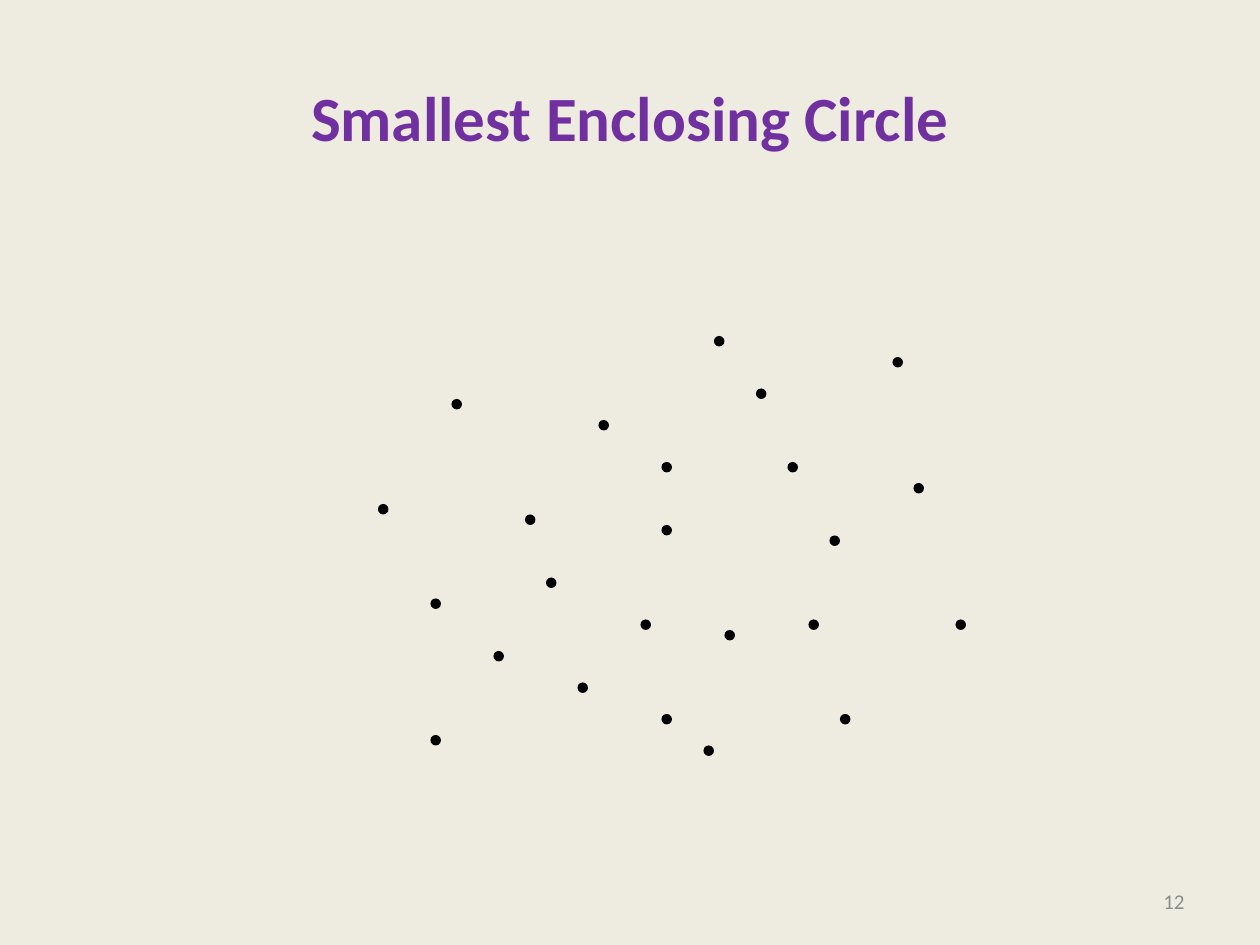
"""Build the smallest enclosing circle slide with its scattered points."""
from typing import Any, NamedTuple

from pptx import Presentation
from pptx.dml.color import RGBColor
from pptx.enum.shapes import MSO_SHAPE as Shape
from pptx.enum.text import MSO_ANCHOR as Anchor, PP_ALIGN as Align
from pptx.util import Pt

CREAM = RGBColor(0xEE, 0xEC, 0xE1)
PURPLE = RGBColor(0x70, 0x30, 0xA0)
GRAY = RGBColor(0x8C, 0x8C, 0x8C)
BLACK = RGBColor(0, 0, 0)
STEP = 6


class Dot(NamedTuple):
    col: int
    row: int


DOTS = [
    Dot(43, 38), Dot(57, 40), Dot(87, 46), Dot(55, 65), Dot(79, 51), Dot(80, 68),
    Dot(68, 32), Dot(63, 44), Dot(69, 60), Dot(85, 34), Dot(41, 70), Dot(36, 48),
    Dot(67, 71), Dot(91, 59), Dot(50, 49), Dot(52, 55), Dot(41, 57), Dot(77, 59),
    Dot(63, 50), Dot(75, 44), Dot(72, 37), Dot(47, 62), Dot(61, 59), Dot(63, 68),
]


def apply(item: Any, form: dict[str, Any]) -> None:
    for name, value in form.items():
        setattr(item, name, value)


def write(box: Any, text: str, place: dict, font: dict, align: Align) -> None:
    apply(box, place)
    frame = box.text_frame
    apply(frame, {"text": text, "word_wrap": True, "vertical_anchor": Anchor.MIDDLE})
    para = frame.paragraphs[0]
    para.alignment = align
    color = font.pop("color")
    apply(para.runs[0].font, {"name": "Calibri", **font})
    para.runs[0].font.color.rgb = color


def draw(group: Any, dot: Dot) -> None:
    mark = group.shapes.add_shape(
        Shape.OVAL, Pt(dot.col * STEP), Pt(dot.row * STEP), Pt(STEP), Pt(STEP))
    mark.shadow.inherit = False
    mark.fill.solid()
    mark.fill.fore_color.rgb = BLACK
    mark.line.fill.background()


def main() -> None:
    deck = Presentation()
    apply(deck, {"slide_width": Pt(720), "slide_height": Pt(540)})
    slide = deck.slides.add_slide(deck.slide_layouts[5])
    back = slide.background.fill
    back.solid()
    back.fore_color.rgb = CREAM

    write(slide.shapes.title, "Smallest Enclosing Circle",
          {"left": Pt(36), "top": Pt(21.6), "width": Pt(648), "height": Pt(90)},
          {"size": Pt(36), "bold": True, "color": PURPLE}, Align.CENTER)
    page = slide.shapes.add_textbox(Pt(516), Pt(500.5), Pt(168), Pt(28.75))
    write(page, "12", {}, {"size": Pt(12), "color": GRAY}, Align.RIGHT)

    group = slide.shapes.add_group_shape()
    for dot in DOTS:
        draw(group, dot)
    deck.save("out.pptx")


if __name__ == "__main__":
    main()
